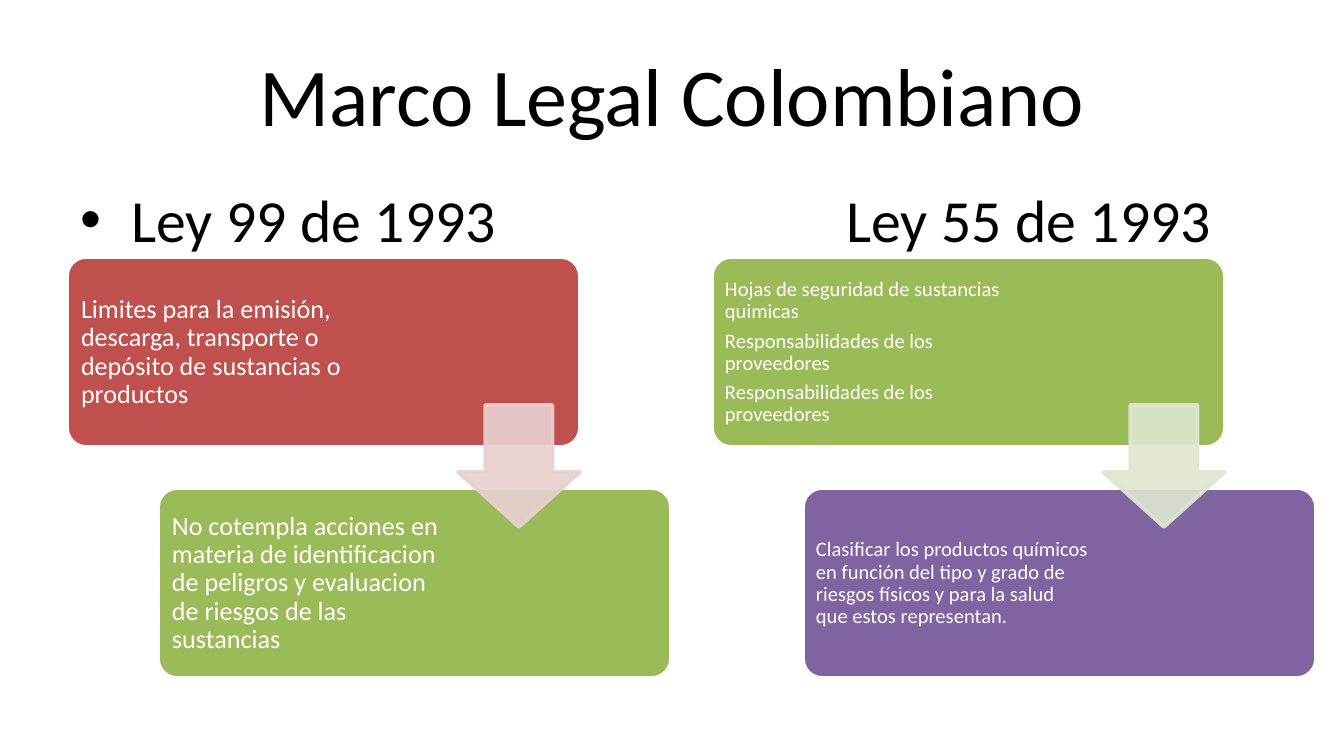
from lxml.etree import SubElement
from pptx import Presentation
from pptx.dml.color import RGBColor
from pptx.enum.shapes import MSO_SHAPE
from pptx.enum.text import MSO_ANCHOR, PP_ALIGN
from pptx.oxml.ns import qn
from pptx.util import Emu, Pt

PX_PER_INCH = 134.4
CARD_WIDTH, CARD_HEIGHT = 513, 190
CARD_TOP, CARD_STEP_X, CARD_STEP_Y = 257, 91, 231
TEXT_OFFSET, TEXT_HEIGHT = 6, 179
TEXT_WIDTHS = (319, 289)
ARROW_X, ARROW_Y, ARROW_SIZE = 391, 405, 122

# One entry per law: left edge, text size, inset, arrow colour, cards
COLUMNS = [
    (67, 14, 8, "E8D0D0", [
        ("C0504D", ["Limites para la emisión, descarga, transporte o depósito "
                    "de sustancias o productos"]),
        ("9BBB59", ["No cotempla acciones en materia de identificacion de peligros "
                    "y evaluacion de riesgos de las sustancias"]),
    ]),
    (712, 11, 7, "DEE7D1", [
        ("9BBB59", ["Hojas de seguridad de sustancias quimicas",
                    "Responsabilidades de los proveedores",
                    "Responsabilidades de los proveedores"]),
        ("8064A2", ["Clasificar los productos químicos en función del tipo y grado de "
                    "riesgos físicos y para la salud que estos representan."]),
    ]),
]


def px(value):
    return Emu(round(value * 914400 / PX_PER_INCH))


def color(value):
    return RGBColor.from_string(value)


def set_attributes(target, values):
    for name, value in values.items():
        setattr(target, name, value)


def add_text(shapes, box, lines, size, text_color, frame_format, paragraph_format):
    shape = shapes.add_textbox(*map(px, box))
    frame = shape.text_frame
    set_attributes(frame, {"word_wrap": True, **frame_format})
    for index, line in enumerate(lines):
        paragraph = frame.paragraphs[0] if index == 0 else frame.add_paragraph()
        set_attributes(paragraph, paragraph_format)
        run = paragraph.add_run()
        run.text = line
        set_attributes(run.font, {"name": "Calibri", "size": Pt(size)})
        run.font.color.rgb = color(text_color)
    return shape


def add_block(shapes, kind, box, fill, line, adjustments):
    shape = shapes.add_shape(kind, *map(px, box))
    shape.shadow.inherit = False
    shape.fill.solid()
    shape.fill.fore_color.rgb = color(fill)
    shape.line.color.rgb = color(line)
    shape.line.width = Pt(2)
    for index, value in enumerate(adjustments):
        shape.adjustments[index] = value
    return shape


def set_opacity(shape, percent):
    for element in shape._element.spPr.iter(qn("a:srgbClr")):
        SubElement(element, qn("a:alpha"), val=str(percent * 1000))


def add_bullet_and_tab(paragraph, indent, tab):
    properties = paragraph._p.get_or_add_pPr()
    properties.set("marL", str(px(indent)))
    properties.set("indent", str(-px(indent)))
    SubElement(properties, qn("a:buFont"), typeface="Arial")
    SubElement(properties, qn("a:buChar"), char="•")
    tabs = SubElement(properties, qn("a:tabLst"))
    SubElement(tabs, qn("a:tab"), pos=str(px(tab)), algn="l")


def add_column(slide, left, size, inset, arrow_color, cards):
    shapes = slide.shapes.add_group_shape().shapes
    margins = ("margin_left", "margin_top", "margin_right", "margin_bottom")
    frame_format = {"vertical_anchor": MSO_ANCHOR.MIDDLE,
                    **dict.fromkeys(margins, px(inset))}
    paragraph_format = {"line_spacing": 0.9, "space_after": Pt(size * 0.35)}
    # Cards, each one a step lower and further right
    for index, (fill, lines) in enumerate(cards):
        x = left + index * CARD_STEP_X
        y = CARD_TOP + index * CARD_STEP_Y
        add_block(shapes, MSO_SHAPE.ROUNDED_RECTANGLE,
                  (x, y, CARD_WIDTH, CARD_HEIGHT), fill, "FFFFFF", [0.1])
        add_text(shapes, (x + TEXT_OFFSET, y + TEXT_OFFSET, TEXT_WIDTHS[index], TEXT_HEIGHT),
                 lines, size, "FFFFFF", frame_format, paragraph_format)
    # Translucent arrow between the cards
    arrow = add_block(shapes, MSO_SHAPE.DOWN_ARROW,
                      (left + ARROW_X, ARROW_Y, ARROW_SIZE, ARROW_SIZE),
                      arrow_color, arrow_color, [0.55, 0.45])
    set_opacity(arrow, 90)


def main():
    presentation = Presentation()
    set_attributes(presentation, {"slide_width": px(1344), "slide_height": px(756)})
    slide = presentation.slides.add_slide(presentation.slide_layouts[6])

    # Law names, the second one at a tab stop
    laws = add_text(slide.shapes, (67, 176, 1210, 499),
                    ["Ley 99 de 1993\tLey 55 de 1993"], 32, "000000", {}, {})
    add_bullet_and_tab(laws.text_frame.paragraphs[0], 51, 766)

    # Title
    add_text(slide.shapes, (67, 31, 1210, 126), ["Marco Legal Colombiano"], 44, "000000",
             {"vertical_anchor": MSO_ANCHOR.MIDDLE}, {"alignment": PP_ALIGN.CENTER})

    for column in COLUMNS:
        add_column(slide, *column)
    presentation.save("out.pptx")


if __name__ == "__main__":
    main()
